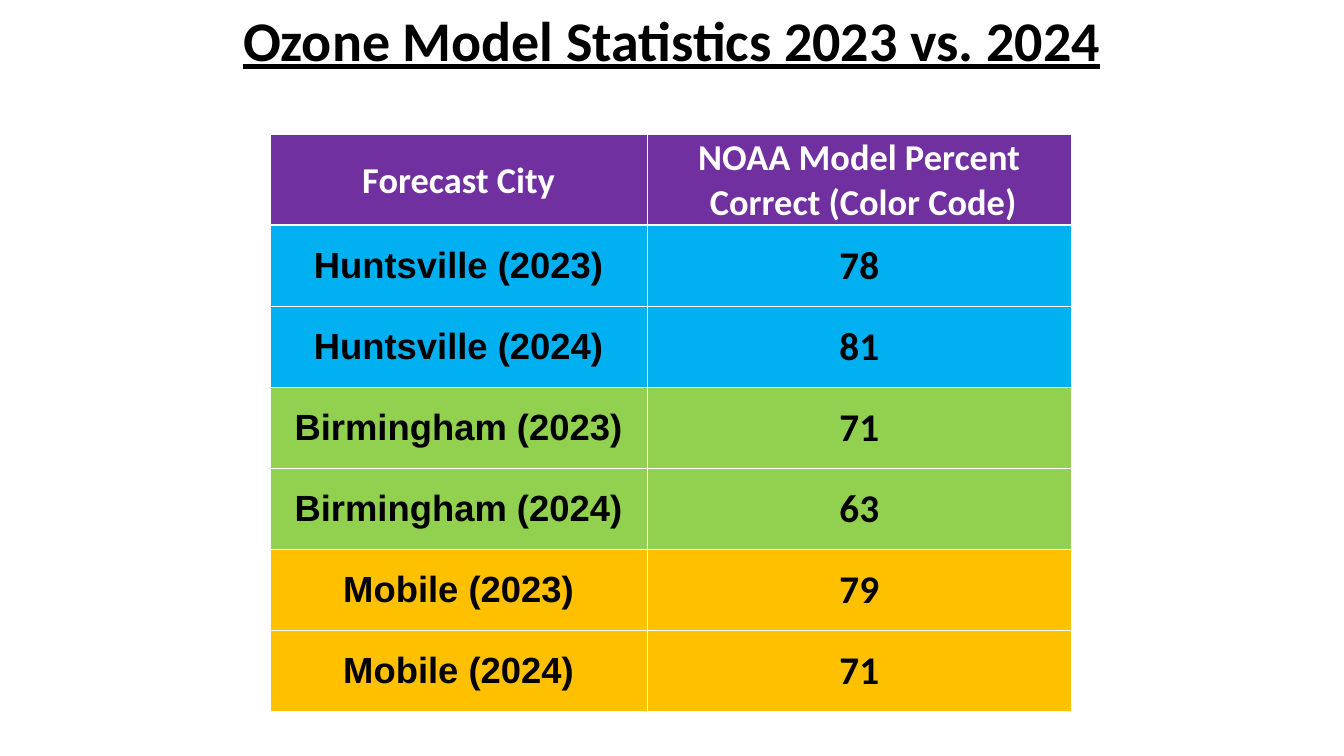
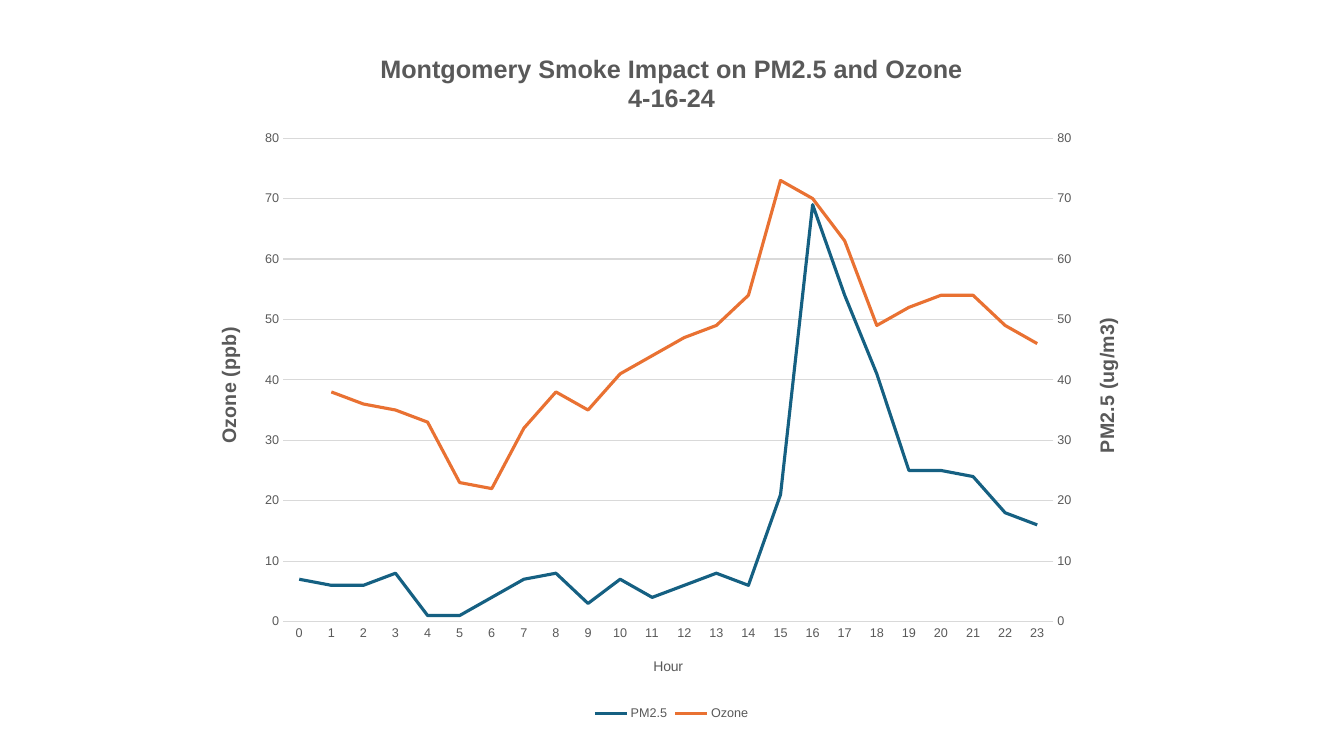
import copy
from dataclasses import dataclass

import pptx
import pptx.chart.data
import pptx.dml.color
import pptx.enum.chart
import pptx.enum.text
import pptx.oxml
import pptx.oxml.ns
import pptx.util

Cm = pptx.util.Cm
Pt = pptx.util.Pt
qn = pptx.oxml.ns.qn


@dataclass(frozen=True)
class Theme:
    ink: str = "000000"
    paper: str = "FFFFFF"
    header: str = "7030A0"
    chart_text: str = "595959"
    grid: str = "D9D9D9"
    heading_font: str = "Calibri"
    body_font: str = "Arial"
    title_size: int = 40
    city_size: int = 26
    score_size: int = 28
    chart_title_size: int = 18
    axis_title_size: int = 14
    hour_title_size: int = 10
    label_size: int = 9
    hairline: float = 0.75
    header_rule: float = 1.5
    series_line: float = 2.25


THEME = Theme()

STATISTICS_TITLE = "Ozone Model Statistics 2023 vs. 2024"
TABLE_HEADER = (["Forecast City"], ["NOAA Model Percent", " Correct (Color Code)"])
CITY_SCORES = [
    ("Huntsville", "00B0F0", {2023: 78, 2024: 81}),
    ("Birmingham", "92D050", {2023: 71, 2024: 63}),
    ("Mobile", "FFC000", {2023: 79, 2024: 71}),
]

SMOKE_TITLE = ["Montgomery Smoke Impact on PM2.5 and Ozone", "4-16-24"]
HOUR_TITLE, OZONE_TITLE, PM_TITLE = "Hour", "Ozone (ppb)", "PM2.5 (ug/m3)"
SMOKE_SERIES = [
    ("PM2.5", "156082", [7, 6, 6, 8, 1, 1, 4, 7, 8, 3, 7, 4,
                         6, 8, 6, 21, 69, 54, 41, 25, 25, 24, 18, 16]),
    ("Ozone", "E97132", [None, 38, 36, 35, 33, 23, 22, 32, 38, 35, 41, 44,
                         47, 49, 54, 73, 70, 63, 49, 52, 54, 54, 49, 46]),
]

TITLE_BOX = (Cm(4.72), Cm(0), Cm(24.41), Cm(3.18))
TABLE_CORNER = (Cm(6.81), Cm(3.4))
COLUMN_WIDTHS = (Cm(9.5), Cm(10.69))
ROW_HEIGHT = Cm(2.04)
CHART_BOX = (Cm(4.9), Cm(0.79), Cm(24.05), Cm(17.48))
PLOT_SHARE = {"x": 0.093, "y": 0.154, "w": 0.807, "h": 0.697}


def rgb(colour):
    return pptx.dml.color.RGBColor.from_string(colour)


def style_font(font, name, size, colour, bold=False):
    font.name, font.size, font.bold = name, Pt(size), bold
    font.color.rgb = rgb(colour)


def write_lines(frame, lines, *style):
    """Write one centred paragraph per line, each as a single styled run."""
    for number, line in enumerate(lines):
        paragraph = frame.add_paragraph() if number else frame.paragraphs[0]
        paragraph.alignment = pptx.enum.text.PP_ALIGN.CENTER
        run = paragraph.add_run()
        run.text = line
        style_font(run.font, *style)


def add_title(slide, text):
    title = slide.shapes.title
    title.left, title.top, title.width, title.height = TITLE_BOX
    frame = title.text_frame
    frame.vertical_anchor = pptx.enum.text.MSO_ANCHOR.TOP
    write_lines(frame, [text], THEME.heading_font, THEME.title_size, THEME.ink, True)
    frame.paragraphs[0].runs[0].font.underline = True


def set_borders(cell, widths):
    """Draw the cell's edges; widths maps L, R, T and B to points."""
    properties = cell._tc.get_or_add_tcPr()
    for position, (side, width) in enumerate(widths.items()):
        edge = pptx.oxml.parse_xml(
            f'<a:ln{side} {pptx.oxml.ns.nsdecls("a")} w="{Pt(width)}"><a:solidFill>'
            f'<a:srgbClr val="{THEME.paper}"/></a:solidFill></a:ln{side}>')
        properties.insert(position, edge)


def fill_cell(cell, lines, fill, top, bottom, *style):
    cell.margin_left = cell.margin_right = cell.margin_top = Cm(0.03)
    cell.margin_bottom = 0
    cell.vertical_anchor = pptx.enum.text.MSO_ANCHOR.MIDDLE
    cell.fill.solid()
    cell.fill.fore_color.rgb = rgb(fill)
    set_borders(cell, {"L": THEME.hairline, "R": THEME.hairline, "T": top, "B": bottom})
    write_lines(cell.text_frame, lines, *style)


def build_statistics(deck):
    slide = deck.slides.add_slide(deck.slide_layouts[5])
    add_title(slide, STATISTICS_TITLE)
    results = [(f"{city} ({year})", str(score), colour)
               for city, colour, scores in CITY_SCORES
               for year, score in scores.items()]
    row_count = len(results) + 1
    table = slide.shapes.add_table(row_count, len(COLUMN_WIDTHS), *TABLE_CORNER,
                                   sum(COLUMN_WIDTHS), ROW_HEIGHT * row_count).table
    for column, width in zip(table.columns, COLUMN_WIDTHS):
        column.width = width
    for row in table.rows:
        row.height = ROW_HEIGHT
    for column, lines in enumerate(TABLE_HEADER):
        fill_cell(table.cell(0, column), lines, THEME.header, THEME.hairline,
                  THEME.header_rule, THEME.heading_font, THEME.city_size, THEME.paper, True)
    for row, (city, score, colour) in enumerate(results, 1):
        top = THEME.header_rule if row == 1 else THEME.hairline
        fill_cell(table.cell(row, 0), [city], colour, top, THEME.hairline,
                  THEME.body_font, THEME.city_size, THEME.ink, True)
        fill_cell(table.cell(row, 1), [score], colour, top, THEME.hairline,
                  THEME.heading_font, THEME.score_size, THEME.ink, True)


def style_axis(axis, title, title_size, bold):
    axis.major_tick_mark = axis.minor_tick_mark = pptx.enum.chart.XL_TICK_MARK.NONE
    style_font(axis.tick_labels.font, THEME.body_font, THEME.label_size, THEME.chart_text)
    write_lines(axis.axis_title.text_frame, [title],
                THEME.body_font, title_size, THEME.chart_text, bold)


def set_plot_area(plot_area):
    for layout in plot_area.findall(qn("c:layout")):
        plot_area.remove(layout)
    shares = "".join(f'<c:{key} val="{share}"/>' for key, share in PLOT_SHARE.items())
    plot_area.insert(0, pptx.oxml.parse_xml(
        f'<c:layout {pptx.oxml.ns.nsdecls("c")}><c:manualLayout>'
        '<c:layoutTarget val="inner"/><c:xMode val="edge"/><c:yMode val="edge"/>'
        f'{shares}</c:manualLayout></c:layout>'))


def move_last_series_right(plot_area, axis_title):
    """Give the last series its own value axis on the right-hand side."""
    left_lines = plot_area.find(qn("c:lineChart"))
    hours, left_axis = plot_area.find(qn("c:catAx")), plot_area.find(qn("c:valAx"))
    right_lines, right_axis, hidden_hours = map(copy.deepcopy, (left_lines, left_axis, hours))
    left_lines.remove(left_lines.findall(qn("c:ser"))[-1])
    for series in right_lines.findall(qn("c:ser"))[:-1]:
        right_lines.remove(series)

    hours_id, values_id = "50010", "50020"
    for link, new_id in zip(right_lines.findall(qn("c:axId")), (hours_id, values_id)):
        link.set("val", new_id)
    for axis, own_id, cross_id in ((right_axis, values_id, hours_id),
                                   (hidden_hours, hours_id, values_id)):
        axis.find(qn("c:axId")).set("val", own_id)
        axis.find(qn("c:crossAx")).set("val", cross_id)
    right_axis.remove(right_axis.find(qn("c:majorGridlines")))
    right_axis.find(qn("c:axPos")).set("val", "r")
    right_axis.find(qn("c:crosses")).set("val", "max")
    right_axis.find(qn("c:title")).find(".//" + qn("a:t")).text = axis_title
    hidden_hours.remove(hidden_hours.find(qn("c:title")))
    hidden_hours.find(qn("c:delete")).set("val", "1")

    left_lines.addnext(right_lines)
    left_axis.addnext(right_axis)
    right_axis.addnext(hidden_hours)


def build_smoke_chart(deck):
    slide = deck.slides.add_slide(deck.slide_layouts[6])
    readings = pptx.chart.data.CategoryChartData()
    readings.categories = [str(hour) for hour in range(24)]
    for name, _, values in SMOKE_SERIES:
        readings.add_series(name, values)
    chart = slide.shapes.add_chart(pptx.enum.chart.XL_CHART_TYPE.LINE,
                                   *CHART_BOX, readings).chart
    style_font(chart.font, THEME.body_font, THEME.hour_title_size, THEME.ink)
    chart.has_title = True
    write_lines(chart.chart_title.text_frame, SMOKE_TITLE,
                THEME.body_font, THEME.chart_title_size, THEME.chart_text, True)
    chart.has_legend = True
    chart.legend.position = pptx.enum.chart.XL_LEGEND_POSITION.BOTTOM
    chart.legend.include_in_layout = False
    style_font(chart.legend.font, THEME.body_font, THEME.label_size, THEME.chart_text)

    hours, ozone = chart.category_axis, chart.value_axis
    style_axis(hours, HOUR_TITLE, THEME.hour_title_size, False)
    style_axis(ozone, OZONE_TITLE, THEME.axis_title_size, True)
    ozone.minimum_scale, ozone.maximum_scale, ozone.major_unit = 0, 80, 10
    ozone.format.line.fill.background()
    for line in (hours.format.line, ozone.major_gridlines.format.line):
        line.color.rgb = rgb(THEME.grid)
        line.width = Pt(THEME.hairline)

    chart.plots[0].vary_by_categories = False
    for series, (_, colour, _) in zip(chart.plots[0].series, SMOKE_SERIES):
        series.smooth = False
        series.marker.style = pptx.enum.chart.XL_MARKER_STYLE.NONE
        series.format.line.color.rgb = rgb(colour)
        series.format.line.width = Pt(THEME.series_line)

    plot_area = chart._chartSpace.chart.plotArea
    set_plot_area(plot_area)
    move_last_series_right(plot_area, PM_TITLE)


def main():
    deck = pptx.Presentation()
    deck.slide_width, deck.slide_height = Cm(33.87), Cm(19.05)
    build_statistics(deck)
    build_smoke_chart(deck)
    deck.save("out.pptx")


if __name__ == "__main__":
    main()
